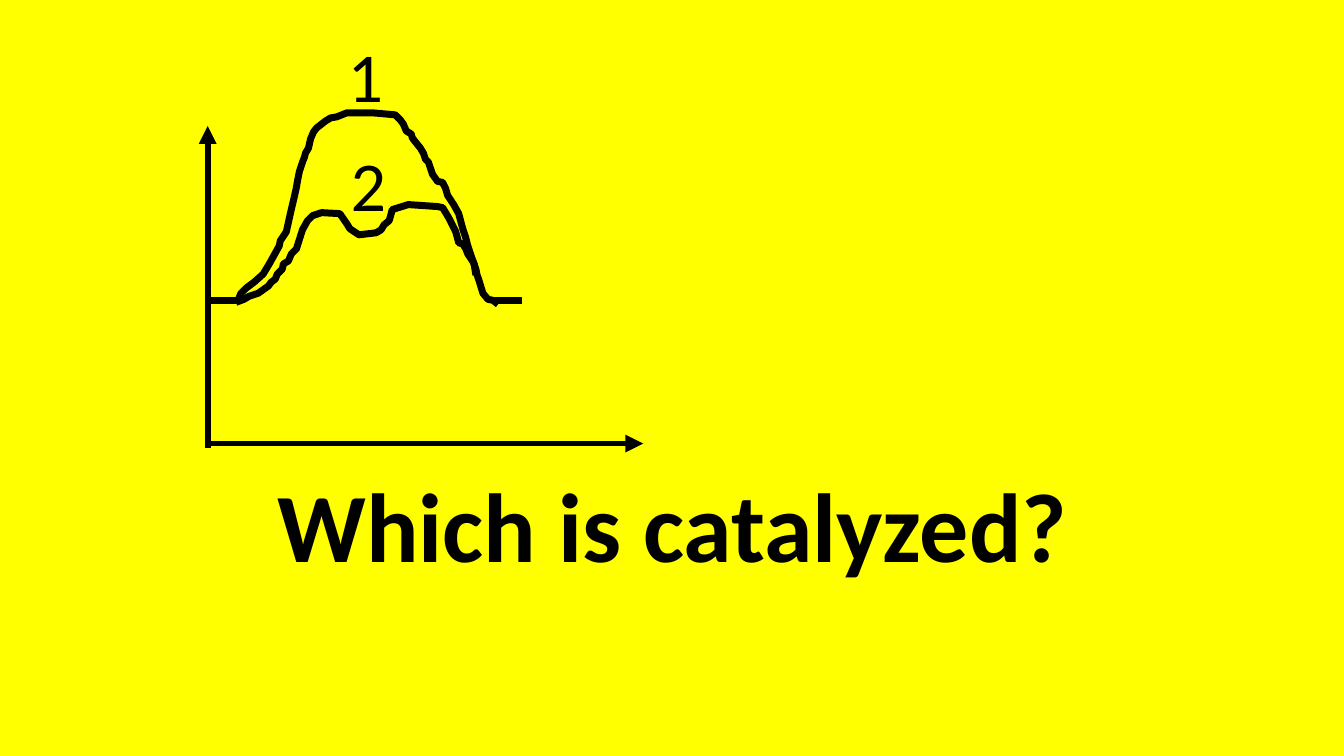
from lxml import etree
from pptx import Presentation
from pptx.dml.color import RGBColor
from pptx.enum.shapes import MSO_CONNECTOR
from pptx.enum.text import MSO_ANCHOR, PP_ALIGN
from pptx.oxml.ns import qn
from pptx.util import Inches, Pt

STRAIGHT = MSO_CONNECTOR.STRAIGHT
TOP, BOTTOM = MSO_ANCHOR.TOP, MSO_ANCHOR.BOTTOM
LEFT, CENTER = PP_ALIGN.LEFT, PP_ALIGN.CENTER


def color(value):
    return RGBColor.from_string(value)


class EnergySlide:
    """Holds the style and the slide, and draws each kind of element."""

    font = "Calibri"
    ink = "000000"
    paper = "FFFF00"

    def __init__(self, deck):
        self.slide = deck.slides.add_slide(deck.slide_layouts[6])
        fill = self.slide.background.fill
        fill.solid()
        fill.fore_color.rgb = color(self.paper)

    def stroke(self, line, width):
        line.color.rgb = color(self.ink)
        line.width = Pt(width)

    def segment(self, start, end, width=5, arrow=False):
        segment = self.slide.shapes.add_connector(
            STRAIGHT, *map(Inches, (*start, *end)))
        self.stroke(segment.line, width)
        properties = segment._element.spPr
        if arrow:
            outline = properties.find(qn("a:ln"))
            etree.SubElement(outline, qn("a:tailEnd"), type="triangle")
        etree.SubElement(properties, qn("a:effectLst"))

    def curve(self, points, width=5):
        start, *rest = [(Inches(x), Inches(y)) for x, y in points]
        builder = self.slide.shapes.build_freeform(*start)
        builder.add_line_segments(rest, close=False)
        curve = builder.convert_to_shape()
        curve.fill.background()
        curve.shadow.inherit = False
        self.stroke(curve.line, width)

    def text(self, words, box, size, bold=False, align=LEFT, anchor=TOP, spacing=1.0):
        frame = self.slide.shapes.add_textbox(*map(Inches, box)).text_frame
        frame.word_wrap = True
        frame.vertical_anchor = anchor
        paragraph = frame.paragraphs[0]
        paragraph.text = words
        paragraph.alignment = align
        paragraph.line_spacing = spacing
        paragraph.font.name = self.font
        paragraph.font.size = Pt(size)
        paragraph.font.bold = bold
        paragraph.font.color.rgb = color(self.ink)


UNCATALYZED = [
    (2.36, 2.98), (2.39, 2.91), (2.44, 2.86), (2.52, 2.8), (2.61, 2.72),
    (2.67, 2.62), (2.72, 2.53), (2.77, 2.44), (2.78, 2.39), (2.84, 2.3),
    (2.88, 2.12), (2.92, 1.95), (2.94, 1.86), (2.95, 1.8), (2.97, 1.7),
    (3, 1.61), (3.02, 1.56), (3.03, 1.52), (3.06, 1.47), (3.08, 1.38),
    (3.11, 1.31), (3.14, 1.27), (3.23, 1.2), (3.28, 1.17), (3.34, 1.16),
    (3.44, 1.12), (3.7, 1.12), (3.92, 1.14), (3.97, 1.19), (4, 1.23),
    (4.03, 1.3), (4.08, 1.33), (4.09, 1.37), (4.17, 1.47), (4.2, 1.52),
    (4.22, 1.58), (4.25, 1.61), (4.29, 1.73), (4.34, 1.8), (4.39, 1.81),
    (4.42, 1.87), (4.44, 1.94), (4.5, 2.03), (4.55, 2.12), (4.59, 2.27),
    (4.62, 2.36), (4.64, 2.44), (4.67, 2.53), (4.72, 2.67), (4.73, 2.72),
    (4.75, 2.78), (4.79, 2.91), (4.84, 2.97), (4.89, 2.98), (4.94, 3.02),
]
CATALYZED = [
    (2.34, 3), (2.42, 2.97), (2.47, 2.94), (2.56, 2.91), (2.66, 2.84),
    (2.69, 2.8), (2.73, 2.77), (2.75, 2.72), (2.8, 2.67), (2.81, 2.62),
    (2.86, 2.59), (2.89, 2.52), (2.94, 2.47), (3, 2.28), (3.05, 2.19),
    (3.1, 2.14), (3.19, 2.11), (3.37, 2.12), (3.44, 2.22), (3.47, 2.27),
    (3.56, 2.33), (3.73, 2.31), (3.78, 2.28), (3.81, 2.23), (3.86, 2.19),
    (3.88, 2.12), (3.89, 2.08), (4.05, 2.03), (4.34, 2.05), (4.39, 2.06),
    (4.45, 2.16), (4.47, 2.2), (4.52, 2.3), (4.55, 2.41), (4.59, 2.42),
    (4.62, 2.47), (4.64, 2.52), (4.7, 2.61), (4.72, 2.73),
]


def main():
    deck = Presentation()
    deck.slide_width, deck.slide_height = Inches(13.33), Inches(7.5)
    energy = EnergySlide(deck)
    energy.text("Which is catalyzed?", (0.13, 3, 13.08, 2.84), 70,
                bold=True, align=CENTER, anchor=BOTTOM, spacing=0.9)
    energy.segment((2.06, 4.44), (2.06, 1.25), 4.25, arrow=True)
    energy.segment((2.06, 4.4), (6.38, 4.4), 4.25, arrow=True)
    for left, right in ((2.06, 2.36), (4.89, 5.18)):
        energy.segment((left, 2.98), (right, 2.98))
    for pathway in (UNCATALYZED, CATALYZED):
        energy.curve(pathway)
    energy.text("1", (3.35, 0.27, 1.69, 0.94), 50)
    energy.text("2", (3.38, 1.36, 1.69, 0.94), 50)
    deck.save("out.pptx")


if __name__ == "__main__":
    main()
